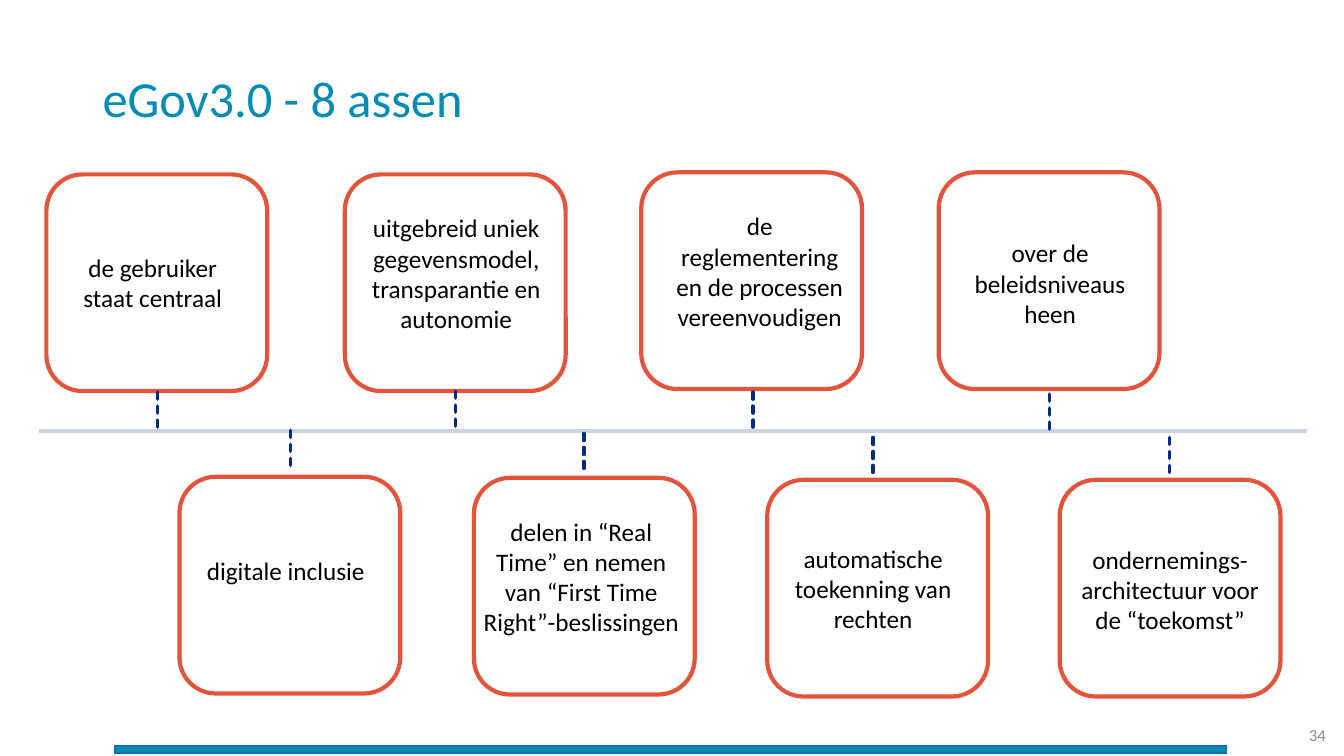
from dataclasses import dataclass

from lxml import etree
from pptx import Presentation
from pptx.dml.color import RGBColor
from pptx.enum.dml import MSO_LINE
from pptx.enum.shapes import MSO_CONNECTOR, MSO_SHAPE
from pptx.enum.text import MSO_ANCHOR, MSO_AUTO_SIZE, PP_ALIGN
from pptx.oxml.ns import qn
from pptx.util import Emu, Pt

RECT, ROUND = MSO_SHAPE.RECTANGLE, MSO_SHAPE.ROUNDED_RECTANGLE
STRAIGHT, DASH = MSO_CONNECTOR.STRAIGHT, MSO_LINE.SQUARE_DOT
LEFT, CENTER, RIGHT = PP_ALIGN.LEFT, PP_ALIGN.CENTER, PP_ALIGN.RIGHT
TOP, MIDDLE = MSO_ANCHOR.TOP, MSO_ANCHOR.MIDDLE
FIXED, GROW = MSO_AUTO_SIZE.NONE, MSO_AUTO_SIZE.SHAPE_TO_FIT_TEXT

SCALE = 9144  # EMU per px, 100 px to the inch
CARD_W, CARD_H, STEM_H = 219, 215, 41
WHITE, BLACK, GRAY = "FFFFFF", "000000", "8C8C8C"
TEAL, BLUE, NAVY, INK, RED = "008CB2", "0070C0", "002060", "002B82", "E2543C"


@dataclass(frozen=True)
class Box:
    x: int
    y: int
    w: int
    h: int


@dataclass(frozen=True)
class Stem:
    x: int
    y: int


@dataclass(frozen=True)
class Axis:
    text: str
    x: int
    y: int
    label: Box
    stem: Stem
    fill: str = ""  # fill of the label


AXES = [
    Axis("de gebruiker staat centraal", 46, 173,
         Box(60, 245, 183, 71), Stem(156, 389), WHITE),
    Axis("digitale inclusie", 178, 473,
         Box(192, 546, 183, 40), Stem(288, 427)),
    Axis("uitgebreid uniek gegevensmodel, transparantie en autonomie",
         342, 173, Box(343, 206, 219, 131), Stem(452, 388)),
    Axis("delen in “Real Time” en nemen van “First Time Right”-beslissingen",
         470, 474, Box(467, 507, 219, 131), Stem(579, 430)),
    Axis("de reglementering en de processen vereenvoudigen",
         636, 171, Box(655, 204, 197, 131), Stem(747, 389)),
    Axis("automatische toekenning van rechten", 761, 476,
         Box(761, 534, 210, 101), Stem(866, 434)),
    Axis("over de beleidsniveaus heen", 931, 171,
         Box(950, 231, 183, 101), Stem(1041, 391)),
    Axis("ondernemings-architectuur voor de “toekomst”", 1051, 476,
         Box(1051, 535, 219, 101), Stem(1160, 434)),
]


def px(*sizes: int) -> list[Emu]:
    return [Emu(size * SCALE) for size in sizes]


def color(code: str) -> RGBColor:
    return RGBColor.from_string(code)


def assign(target, values: dict) -> None:
    for name, value in values.items():
        setattr(target, name, value)


def paint(item, fill: str) -> None:
    item.fill.solid()
    item.fill.fore_color.rgb = color(fill)


def shape(slide, kind, box: Box, fill: str, line: str, width: float):
    item = slide.shapes.add_shape(kind, *px(box.x, box.y, box.w, box.h))
    item.shadow.inherit = False
    paint(item, fill)
    item.line.color.rgb = color(line)
    item.line.width = Pt(width)
    edge = item._element.spPr.find(qn("a:ln"))
    etree.SubElement(edge, qn("a:miter"), lim="800000")
    return item


def label(slide, text: str, box: Box, size: int, ink: str, align=CENTER,
          anchor=TOP, gap: float = 1.0, fit=FIXED, fill: str = "") -> None:
    item = slide.shapes.add_textbox(*px(box.x, box.y, box.w, box.h))
    if fill:
        paint(item, fill)
    frame = item.text_frame
    assign(frame, {"word_wrap": True, "vertical_anchor": anchor,
                   "auto_size": fit})
    para = frame.paragraphs[0]
    assign(para, {"alignment": align, "line_spacing": gap})
    run = para.add_run()
    run.text = text
    assign(run.font, {"name": "Calibri", "size": Pt(size)})
    run.font.color.rgb = color(ink)


def draw_stem(slide, stem: Stem) -> None:
    ends = px(stem.x, stem.y, stem.x, stem.y + STEM_H)
    item = slide.shapes.add_connector(STRAIGHT, *ends)
    assign(item.line, {"width": Pt(2.5), "dash_style": DASH})
    item.line.color.rgb = color(INK)
    props = item._element.spPr
    props.find(qn("a:ln")).set("cap", "rnd")
    etree.SubElement(props, qn("a:effectLst"))


def fade(item, percent: int) -> None:
    tone = item._element.spPr.find(qn("a:solidFill"))[0]
    etree.SubElement(tone, qn("a:alpha"), val=str(percent * 1000))


def main() -> None:
    deck = Presentation()
    deck.slide_width, deck.slide_height = px(1333, 750)
    slide = deck.slides.add_slide(deck.slide_layouts[6])

    # Footer and title
    label(slide, "34", Box(1243, 709, 82, 40), 12, GRAY, RIGHT, MIDDLE)
    shape(slide, RECT, Box(114, 740, 1102, 7), TEAL, BLUE, 1)
    label(slide, "eGov3.0 - 8 assen", Box(92, 28, 1150, 145), 36, TEAL,
          LEFT, MIDDLE, 0.9, fill=WHITE)

    # Time line
    track = shape(slide, RECT, Box(38, 425, 1259, 5), NAVY, WHITE, 1)
    fade(track, 20)

    # Cards, each with a label and a stem
    for axis in AXES:
        card = Box(axis.x, axis.y, CARD_W, CARD_H)
        shape(slide, ROUND, card, WHITE, RED, 3)
        label(slide, axis.text, axis.label, 18, BLACK, fit=GROW,
              fill=axis.fill)
        draw_stem(slide, axis.stem)

    deck.save("out.pptx")


if __name__ == "__main__":
    main()
